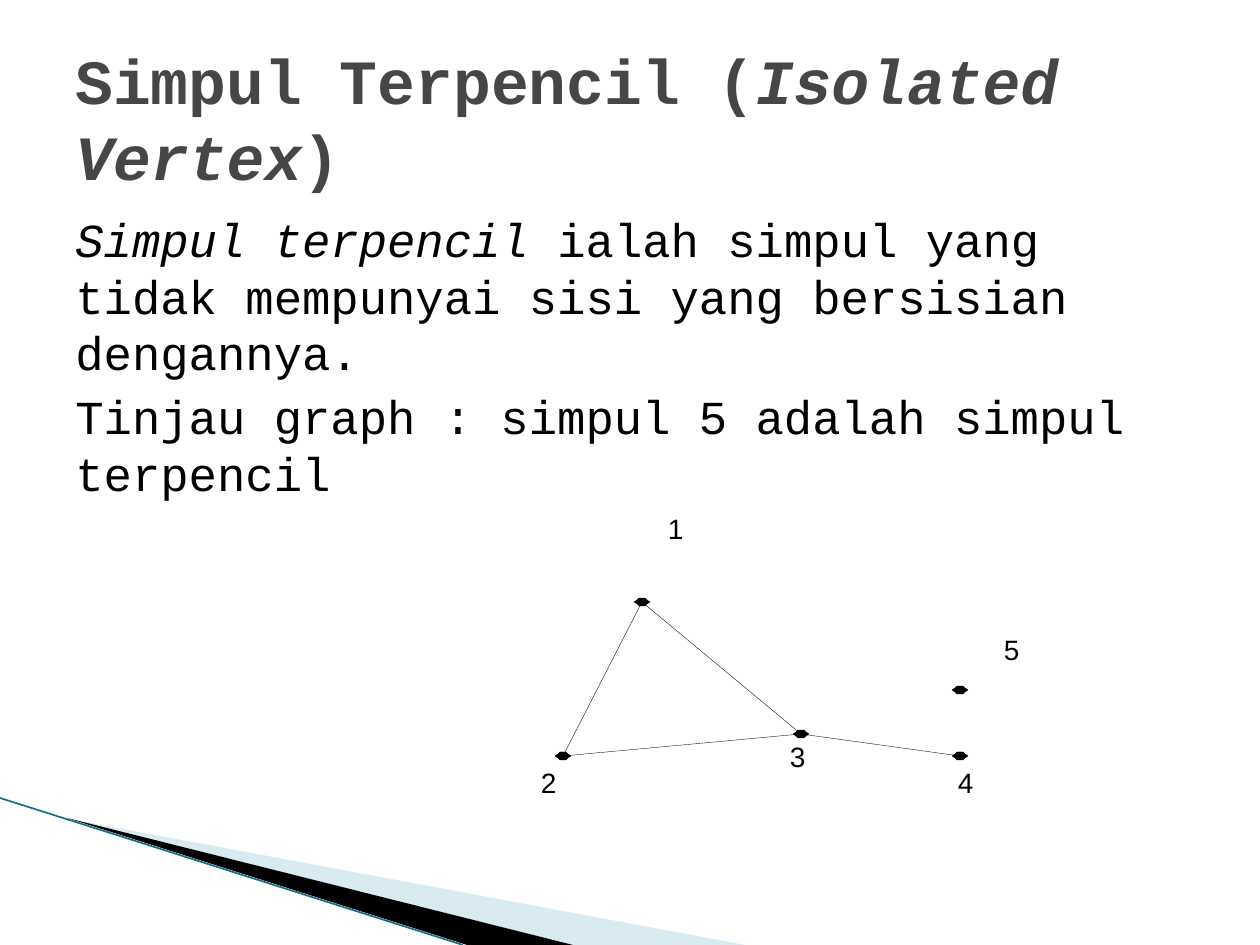
from typing import NamedTuple

from lxml import etree
from pptx import Presentation
from pptx.dml.color import RGBColor
from pptx.enum import shapes, text
from pptx.oxml import ns
from pptx.util import Emu, Pt

SCALE = 914400 / 126  # EMU in one px
BLACK, GREY, PALE, TEAL = "000000", "464646", "A0CBDC", "12708A"
DOT_OUTLINE = [(-8, 0), (-5, -2), (-3, -4), (3, -4), (5, -2),
               (8, 0), (5, 2), (3, 4), (-3, 4), (-5, 2)]


class Vertex(NamedTuple):
    x: int
    y: int
    label_x: int
    label_y: int


class Span(NamedTuple):
    words: str
    italic: bool = False


class Style(NamedTuple):
    font: str
    size: int
    color: str
    bold: bool = False


VERTICES = {
    "1": Vertex(642, 602, 668, 512),
    "2": Vertex(563, 756, 541, 766),
    "3": Vertex(801, 734, 790, 740),
    "4": Vertex(960, 756, 958, 766),
    "5": Vertex(960, 690, 1004, 633),
}
EDGES = ["12", "34", "23", "13"]

TITLE = [[Span("Simpul Terpencil ("), Span("Isolated Vertex", True), Span(")")]]
BODY = [
    [Span("Simpul terpencil", True),
     Span(" ialah simpul yang tidak mempunyai sisi yang bersisian dengannya.")],
    [Span("Tinjau graph : simpul 5 adalah simpul terpencil")],
]


def px(length: int) -> Emu:
    return Emu(round(length * SCALE))


def rgb(color: str) -> RGBColor:
    return RGBColor.from_string(color)


def add_polygon(page, points: list, color: str, alpha: int = 100):
    builder = page.shapes.build_freeform(*points[0], scale=SCALE)
    builder.add_line_segments(points[1:], close=True)
    polygon = builder.convert_to_shape()
    polygon.shadow.inherit = False
    polygon.fill.solid()
    polygon.fill.fore_color.rgb = rgb(color)
    polygon.line.fill.background()
    if alpha < 100:
        fill = polygon._element.spPr.find(ns.qn("a:solidFill"))
        etree.SubElement(fill[0], ns.qn("a:alpha"), val=str(alpha * 1000))
    return polygon


def add_line(page, start: tuple, end: tuple, color: str, width: float) -> None:
    line = page.shapes.add_connector(
        shapes.MSO_CONNECTOR.STRAIGHT, *map(px, start + end))
    line.line.color.rgb = rgb(color)
    line.line.width = Pt(width)
    etree.SubElement(line._element.spPr, ns.qn("a:effectLst"))


def add_text(page, frame: tuple, paragraphs: list, style: Style,
             gap: int = 0, wrap: bool = True):
    box = page.shapes.add_textbox(*map(px, frame))
    box.text_frame.word_wrap = wrap
    for index, spans in enumerate(paragraphs):
        if index == 0:
            para = box.text_frame.paragraphs[0]
        else:
            para = box.text_frame.add_paragraph()
            para.space_before = Pt(gap)
        for span in spans:
            run = para.add_run()
            run.text = span.words
            run.font.name = style.font
            run.font.size = Pt(style.size)
            run.font.bold = style.bold
            run.font.italic = span.italic
            run.font.color.rgb = rgb(style.color)
    return box.text_frame


def add_decoration(page) -> None:
    add_polygon(page, [(69, 819), (745, 945), (573, 945)], PALE, alpha=40)
    add_polygon(page, [(67, 818), (573, 945), (467, 945)], BLACK)
    add_line(page, (0, 798), (463, 945), TEAL, 0.95)


def add_graph(page) -> None:
    for vertex in VERTICES.values():
        outline = [(vertex.x + dx, vertex.y + dy) for dx, dy in DOT_OUTLINE]
        dot = add_polygon(page, outline, BLACK)
        dot.line.color.rgb = rgb(BLACK)
        dot.line.width = Pt(0.2)
    for start, end in EDGES:
        add_line(page, VERTICES[start][:2], VERTICES[end][:2], BLACK, 0.2)
    for name, vertex in VERTICES.items():
        label = add_text(page, (vertex.label_x, vertex.label_y, 15, 34),
                         [[Span(name)]], Style("Arial", 16, BLACK), wrap=False)
        label.margin_left = label.margin_right = 0
        label.margin_top = label.margin_bottom = 0
        label.auto_size = text.MSO_AUTO_SIZE.SHAPE_TO_FIT_TEXT


def main() -> None:
    deck = Presentation()
    deck.slide_width, deck.slide_height = px(1260), px(945)
    page = deck.slides.add_slide(deck.slide_layouts[6])
    add_decoration(page)
    add_text(page, (63, 204, 1134, 624), BODY,
             Style("Courier New", 27, BLACK), gap=4)
    title = add_text(page, (63, 38, 1134, 158), TITLE,
                     Style("Courier New", 36, GREY, bold=True))
    title.vertical_anchor = text.MSO_ANCHOR.MIDDLE
    add_graph(page)
    deck.save("out.pptx")


if __name__ == "__main__":
    main()
